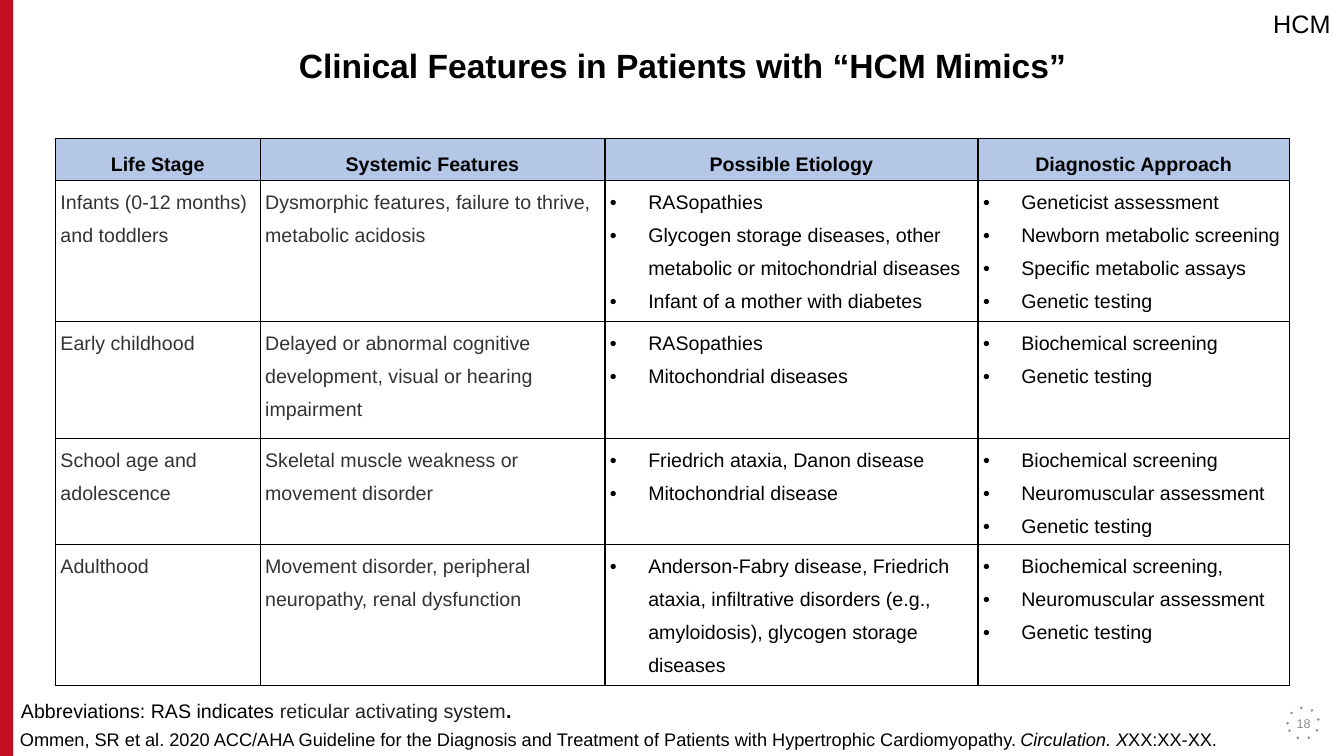
from lxml import etree
from pptx import Presentation
from pptx import util as u
from pptx.dml.color import RGBColor
from pptx.enum import dml, shapes, text
from pptx.oxml.ns import qn

BLACK, DARK, GRAY, RED, BLUE = "000000", "333333", "8A8B8A", "C10E21", "B4C7E7"
COLUMNS = [2.03, 3.42, 3.7, 3.09]
ROWS = [0.42, 1.4, 1.16, 1.05, 1.4]
HEADER = ["Life Stage", "Systemic Features", "Possible Etiology", "Diagnostic Approach"]
STAGES = [
    ("Infants (0-12 months) and toddlers",
     "Dysmorphic features, failure to thrive, metabolic acidosis",
     ["RASopathies",
      "Glycogen storage diseases, other metabolic or mitochondrial diseases",
      "Infant of a mother with diabetes"],
     ["Geneticist assessment", "Newborn metabolic screening",
      "Specific metabolic assays", "Genetic testing"]),
    ("Early childhood",
     "Delayed or abnormal cognitive development, visual or hearing impairment",
     ["RASopathies", "Mitochondrial diseases"],
     ["Biochemical screening", "Genetic testing"]),
    ("School age and adolescence",
     "Skeletal muscle weakness or movement disorder",
     ["Friedrich ataxia, Danon disease", "Mitochondrial disease"],
     ["Biochemical screening", "Neuromuscular assessment", "Genetic testing"]),
    ("Adulthood",
     "Movement disorder, peripheral neuropathy, renal dysfunction",
     ["Anderson-Fabry disease, Friedrich ataxia, infiltrative disorders "
      "(e.g., amyloidosis), glycogen storage diseases"],
     ["Biochemical screening,", "Neuromuscular assessment", "Genetic testing"]),
]


def rgb(value):
    return RGBColor.from_string(value)


def add_run(p, words, size, color=BLACK, bold=False, italic=False):
    r = p.add_run()
    r.text = words
    f = r.font
    f.name, f.size, f.bold, f.italic = "Arial", u.Pt(size), bold, italic
    f.color.rgb = rgb(color)


def add_text(s, box, runs, size, wrap=True):
    sp = s.shapes.add_textbox(*map(u.Inches, box))
    tf = sp.text_frame
    tf.word_wrap = wrap
    for words, style in runs:
        add_run(tf.paragraphs[0], words, size, **style)
    return tf


def add_preset(s, kind, box):
    sp = s.shapes.add_shape(kind, *map(u.Inches, box))
    sp.shadow.inherit = False
    return sp


# Red band along the left edge
def add_band(s, box):
    sp = add_preset(s, shapes.MSO_SHAPE.RECTANGLE, box)
    sp.fill.solid()
    sp.fill.fore_color.rgb = rgb(RED)
    sp.line.fill.background()


# Slide number inside a dotted ring
def add_page_number(s, box, number):
    x, y, w, h = box
    ring = 0.31
    sp = add_preset(s, shapes.MSO_SHAPE.OVAL, (x + 0.06, y + 0.04, ring, ring))
    sp.fill.background()
    sp.line.color.rgb = rgb(GRAY)
    sp.line.width = u.Pt(2)
    sp.line.dash_style = dml.MSO_LINE.ROUND_DOT
    ln = sp.element.spPr.find(qn("a:ln"))
    ln.set("cap", "rnd")
    ln.find(qn("a:prstDash")).set("val", "dot")
    tf = add_text(s, box, [(number, {"color": GRAY})], 9)
    tf.margin_left = tf.margin_right = u.Inches(0.12)
    tf.margin_top = tf.margin_bottom = u.Inches(0.06)
    tf.vertical_anchor = text.MSO_ANCHOR.MIDDLE
    tf.paragraphs[0].alignment = text.PP_ALIGN.CENTER


def add_title(s, box, words):
    sp = s.shapes.title
    sp.left, sp.top, sp.width, sp.height = map(u.Inches, box)
    p = sp.text_frame.paragraphs[0]
    p.alignment = text.PP_ALIGN.CENTER
    add_run(p, words, 24, bold=True)


def add_bullet(p):
    pPr = p._p.get_or_add_pPr()
    pPr.set("marL", str(u.Inches(0.38)))
    pPr.set("indent", str(-u.Inches(0.38)))
    color = etree.SubElement(pPr, qn("a:buClr"))
    etree.SubElement(color, qn("a:srgbClr")).set("val", BLACK)
    etree.SubElement(pPr, qn("a:buFont")).set("typeface", "Arial")
    etree.SubElement(pPr, qn("a:buChar")).set("char", "•")


def set_borders(cell):
    tcPr = cell._tc.get_or_add_tcPr()
    for i, side in enumerate(("lnL", "lnR", "lnT", "lnB")):
        ln = etree.Element(qn("a:" + side), w=str(u.Pt(1)))
        fill = etree.SubElement(ln, qn("a:solidFill"))
        etree.SubElement(fill, qn("a:srgbClr")).set("val", BLACK)
        tcPr.insert(i, ln)


def fill_cell(cell, content, header):
    cell.margin_left = cell.margin_right = u.Inches(0.05)
    cell.margin_top = cell.margin_bottom = 0
    if header:
        cell.fill.solid()
        cell.fill.fore_color.rgb = rgb(BLUE)
        cell.vertical_anchor = text.MSO_ANCHOR.MIDDLE
    else:
        cell.fill.background()
    set_borders(cell)
    bulleted = isinstance(content, list)
    tf = cell.text_frame
    for i, words in enumerate(content if bulleted else [content]):
        p = tf.paragraphs[0] if i == 0 else tf.add_paragraph()
        p.line_spacing = 1.5
        if header:
            p.alignment = text.PP_ALIGN.CENTER
        if bulleted:
            add_bullet(p)
        add_run(p, words, 14, BLACK if header or bulleted else DARK, bold=header)


# Table of life stages
def add_stage_table(s, left, top):
    size = map(u.Inches, (left, top, sum(COLUMNS), sum(ROWS)))
    table = s.shapes.add_table(len(ROWS), len(COLUMNS), *size).table
    table.first_row = table.horz_banding = False
    for column, width in zip(table.columns, COLUMNS):
        column.width = u.Inches(width)
    for i, (height, contents) in enumerate(zip(ROWS, [HEADER, *STAGES])):
        table.rows[i].height = u.Inches(height)
        for j, content in enumerate(contents):
            fill_cell(table.cell(i, j), content, header=i == 0)


# Abbreviations and citation below the table
def add_notes(s, left, top):
    add_text(s, (left, top, 6.16, 0.34), [
        ("Abbreviations: RAS indicates ", {}),
        ("reticular activating system", {"color": "202124"}),
        (".", {"bold": True})], 14)
    add_text(s, (left - 0.01, top + 0.3, 13.06, 0.32), [
        ("Ommen, SR et al. 2020 ACC/AHA Guideline for the Diagnosis and Treatment "
         "of Patients with Hypertrophic Cardiomyopathy. ", {}),
        ("Circulation. X", {"italic": True}),
        ("XX:XX-XX.", {})], 13)


def main():
    prs = Presentation()
    prs.slide_width, prs.slide_height = u.Inches(13.33), u.Inches(7.5)
    s = prs.slides.add_slide(prs.slide_layouts[5])
    add_band(s, (0, 0, 0.13, 7.5))
    add_text(s, (12.53, 0.03, 0.8, 0.4), [("HCM", {})], 18, wrap=False)
    add_title(s, (2.11, 0.4, 9.32, 0.5), "Clinical Features in Patients with “HCM Mimics”")
    add_stage_table(s, 0.55, 1.37)
    add_notes(s, 0.11, 6.88)
    add_page_number(s, (12.71, 6.98, 0.44, 0.39), "18")
    prs.save("out.pptx")


if __name__ == "__main__":
    main()
